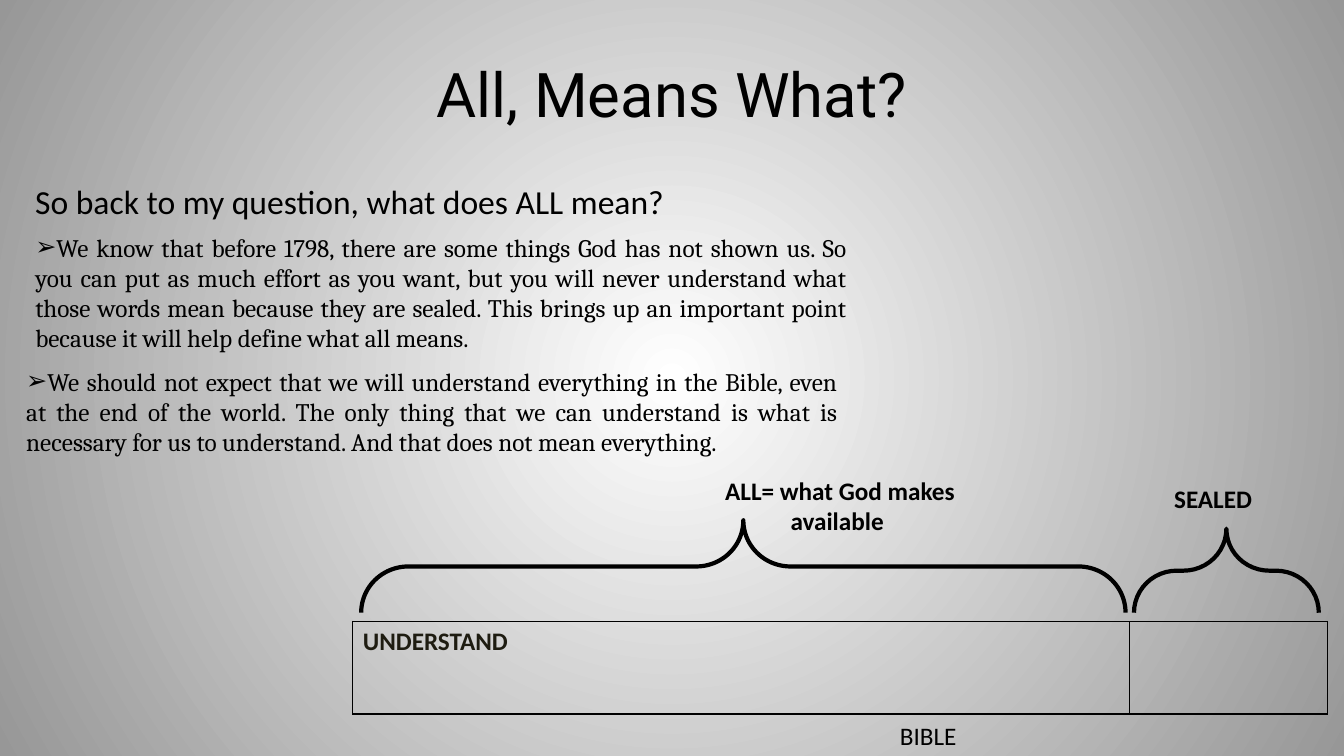
import pptx
import pptx.util
import pptx.dml.color
import pptx.enum.shapes
import pptx.enum.text
import pptx.oxml
import pptx.oxml.ns

Pt = pptx.util.Pt
Color = pptx.dml.color.RGBColor
Align = pptx.enum.text.PP_ALIGN
Anchor = pptx.enum.text.MSO_ANCHOR
Size = pptx.enum.text.MSO_AUTO_SIZE

BLACK = Color(0x00, 0x00, 0x00)
WHITE = Color(0xFF, 0xFF, 0xFF)
GRAY = Color(0x97, 0x97, 0x97)
DARK = Color(0x1E, 0x1C, 0x11)

POINTS = [
    "We know that before 1798, there are some things God has not shown us. "
    "So you can put as much effort as you want, but you will never understand "
    "what those words mean because they are sealed. This brings up an important "
    "point because it will help define what all means. ",
    "We should not expect that we will understand everything in the Bible, even "
    "at the end of the world. The only thing that we can understand is what is "
    "necessary for us to understand. And that does not mean everything.",
]


def make(tag, **attrs):
    """Return a DrawingML element with the given attributes."""
    node = pptx.oxml.parse_xml(f"<a:{tag} {pptx.oxml.ns.nsdecls('a')}/>")
    for key, val in attrs.items():
        node.set(key, str(val))
    return node


def place(shape, x, y, w, h):
    shape.left, shape.top, shape.width, shape.height = Pt(x), Pt(y), Pt(w), Pt(h)


def write(frame, text, size, font="Calibri", color=BLACK, bold=False,
          align=Align.LEFT):
    """Fill a text frame with one formatted paragraph and return it."""
    frame.text = text
    frame.word_wrap = True
    para = frame.paragraphs[0]
    para.alignment = align
    for run in para.runs:
        run.font.size = Pt(size)
        run.font.name = font
        run.font.bold = bold
        run.font.color.rgb = color
    return para


def label(slide, text, x, y, w, h, size=18, bold=False, align=Align.CENTER):
    box = slide.shapes.add_textbox(Pt(x), Pt(y), Pt(w), Pt(h))
    write(box.text_frame, text, size, bold=bold, align=align)


def paint(slide):
    """Round gradient, white in the centre."""
    fill = slide.background.fill
    fill.gradient()
    for stop, color in zip(fill.gradient_stops, (WHITE, GRAY)):
        stop.color.rgb = color
    fill.gradient_stops[0].position = 0
    fill.gradient_stops[1].position = 1
    lin = slide.element.find(".//" + pptx.oxml.ns.qn("a:lin"))
    ring = make("path", path="circle")
    ring.append(make("fillToRect", l=50000, t=50000, r=50000, b=50000))
    lin.getparent().replace(lin, ring)


def head(slide, x, y, w, h):
    title = slide.shapes.title
    place(title, x, y, w, h)
    title.text_frame.vertical_anchor = Anchor.MIDDLE
    write(title.text_frame, "All, Means What?", 44, "Roboto", align=Align.CENTER)


def lists(slide, x, y, w, h):
    """Question line with the two bullet blocks below it."""
    label(slide, "So back to my question, what does ALL mean?",
          x, y, w + 168, 36, size=24, align=Align.LEFT)
    spots = [(x, y + 36), (x - 6.5, y + 131.8)]
    for num, (text, (left, top)) in enumerate(zip(POINTS, spots), 1):
        body = slide.placeholders[num]
        place(body, left, top, w, h)
        frame = body.text_frame
        frame.vertical_anchor = Anchor.TOP
        frame.auto_size = Size.SHAPE_TO_FIT_TEXT
        para = write(frame, text, 18, "Cambria", align=Align.JUSTIFY)
        para.space_before = Pt(0)
        props = para._p.get_or_add_pPr()
        props.set("marL", "0")
        props.set("indent", "0")
        props.append(make("buChar", char="➢"))


def brace(slide, x, y, w, h):
    """Right brace turned to point up, filling the box as seen."""
    kind = pptx.enum.shapes.MSO_SHAPE.RIGHT_BRACE
    shape = slide.shapes.add_shape(kind, Pt(x + (w - h) / 2), Pt(y + (h - w) / 2),
                                   Pt(h), Pt(w))
    shape.rotation = 270
    shape.adjustments[0] = 0.51
    shape.shadow.inherit = False
    shape.fill.background()
    shape.line.color.rgb = BLACK
    shape.line.width = Pt(3)


def edge(cell):
    """Black cell borders, thicker at the bottom."""
    cell.fill.background()
    props = cell._tc.get_or_add_tcPr()
    for num, (side, width) in enumerate(zip("LRTB", (1, 1, 1, 2))):
        line = make("ln" + side, w=Pt(width))
        fill = make("solidFill")
        fill.append(make("srgbClr", val=BLACK))
        line.append(fill)
        props.insert(num, line)


def chart(slide, x, y, w, h):
    """Bible bar with braces above and labels around it."""
    top = y + 108
    wide, high = w - 141, 66

    # Bar
    grid = slide.shapes.add_table(1, 2, Pt(x), Pt(top), Pt(w), Pt(high)).table
    grid.first_row = grid.horz_banding = False
    grid.columns[0].width = Pt(wide)
    grid.columns[1].width = Pt(w - wide)
    for cell in grid.iter_cells():
        edge(cell)
    write(grid.cell(0, 0).text_frame, "UNDERSTAND", 18, color=DARK, bold=True)

    # Braces
    for left, span, tall in ((x + 6, 546, 66), (x + 558, 132, 60)):
        brace(slide, left, top - 6.4 - tall, span, tall)

    # Labels
    label(slide, "ALL= what God makes available ", x + 234, y, 228, 51, bold=True)
    label(slide, "SEALED", x + 569.5, y + 6, 90, 30, bold=True)
    label(slide, "BIBLE", x + 330, y + h - 29, 162, 29)


def main():
    deck = pptx.Presentation()
    deck.slide_width, deck.slide_height = Pt(960), Pt(540)
    slide = deck.slides.add_slide(deck.slide_layouts.get_by_name("Two Content"))
    paint(slide)
    head(slide, 48, 21.6, 864, 90)
    lists(slide, 18, 126, 594, 94.3)
    chart(slide, 252, 336, 696, 204)
    deck.save("out.pptx")


if __name__ == "__main__":
    main()
